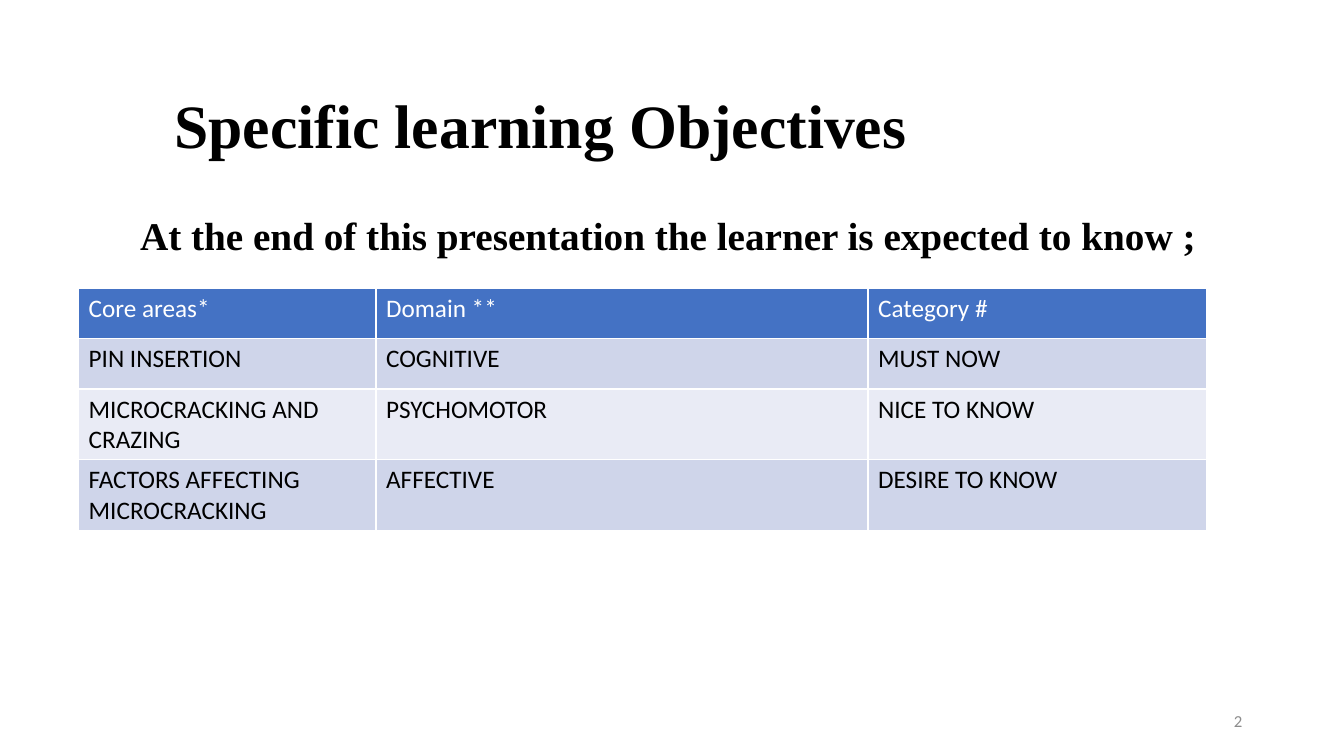
from lxml import etree
from pptx import Presentation
from pptx.dml.color import RGBColor
from pptx.enum.text import MSO_ANCHOR, PP_ALIGN
from pptx.oxml.ns import qn
from pptx.util import Inches, Pt

LEFT, RIGHT = PP_ALIGN.LEFT, PP_ALIGN.RIGHT
TOP, MIDDLE = MSO_ANCHOR.TOP, MSO_ANCHOR.MIDDLE
SERIF, SANS = "Times New Roman", "Calibri"
COLORS = {
    "black": "000000",
    "white": "FFFFFF",
    "header": "4472C4",
    "odd": "CFD5EA",
    "even": "E9EBF5",
    "muted": "8C8C8C",
}
OBJECTIVES = [
    ["Core areas*", "Domain **", "Category #"],
    ["PIN INSERTION", "COGNITIVE", "MUST NOW"],
    ["MICROCRACKING AND CRAZING", "PSYCHOMOTOR", "NICE TO KNOW"],
    ["FACTORS AFFECTING MICROCRACKING", "AFFECTIVE", "DESIRE TO KNOW"],
]


class SlideBuilder:
    """Places elements by percentages of the slide's width and height."""

    def __init__(self, presentation):
        self.width = presentation.slide_width
        self.height = presentation.slide_height
        self.slide = presentation.slides.add_slide(presentation.slide_layouts[6])

    def across(self, percent):
        return round(self.width * percent / 100)

    def down(self, percent):
        return round(self.height * percent / 100)

    def style(self, paragraph, size, font, color, bold=False):
        paragraph.font.size = Pt(size)
        paragraph.font.name = font
        paragraph.font.bold = bold
        paragraph.font.color.rgb = RGBColor.from_string(COLORS[color])

    def text(self, words, left, top, width, height, size, font, color,
             bold=False, align=LEFT, anchor=TOP, spacing=1.0):
        shape = self.slide.shapes.add_textbox(
            self.across(left), self.down(top), self.across(width), self.down(height))
        frame = shape.text_frame
        frame.word_wrap = True
        frame.vertical_anchor = anchor
        paragraph = frame.paragraphs[0]
        paragraph.text = words
        paragraph.alignment = align
        paragraph.line_spacing = spacing
        self.style(paragraph, size, font, color, bold)

    def border(self, cell, color, points):
        properties = cell._tc.get_or_add_tcPr()
        for position, side in enumerate(("lnL", "lnR", "lnT", "lnB")):
            line = etree.Element(qn(f"a:{side}"), w=str(Pt(points)))
            fill = etree.SubElement(line, qn("a:solidFill"))
            etree.SubElement(fill, qn("a:srgbClr"), val=COLORS[color])
            properties.insert(position, line)

    def table(self, rows, left, top, column_widths, row_height):
        table = self.slide.shapes.add_table(
            len(rows), len(column_widths), self.across(left), self.down(top),
            self.across(sum(column_widths)), self.down(row_height * len(rows))).table
        for column, width in zip(table.columns, column_widths):
            column.width = self.across(width)
        for row_index, row in enumerate(rows):
            is_header = row_index == 0
            fill = "header" if is_header else ("even", "odd")[row_index % 2]
            for column_index, words in enumerate(row):
                cell = table.cell(row_index, column_index)
                cell.text = words
                cell.fill.solid()
                cell.fill.fore_color.rgb = RGBColor.from_string(COLORS[fill])
                self.border(cell, "white", 1)
                self.style(cell.text_frame.paragraphs[0], 18, SANS,
                           "white" if is_header else "black")


def main():
    presentation = Presentation()
    presentation.slide_width = Inches(13.33)
    presentation.slide_height = Inches(7.5)
    builder = SlideBuilder(presentation)

    # Title
    builder.text("Specific learning Objectives", 12.23, 8.93, 75.99, 16.13,
                 44, SERIF, "black", bold=True, anchor=MIDDLE, spacing=0.9)

    # Objectives table
    builder.table(OBJECTIVES, 5.85, 38.13, [22.13, 36.61, 25.21], 6.67)

    # Lead-in above the table
    builder.text("At the end of this presentation the learner is expected to know ;",
                 9.68, 27.33, 80.35, 7.6, 28, SERIF, "black", bold=True)

    # Slide number
    builder.text("2", 70.67, 92.67, 22.5, 5.33, 12, SANS, "muted",
                 align=RIGHT, anchor=MIDDLE)

    presentation.save("out.pptx")


if __name__ == "__main__":
    main()
